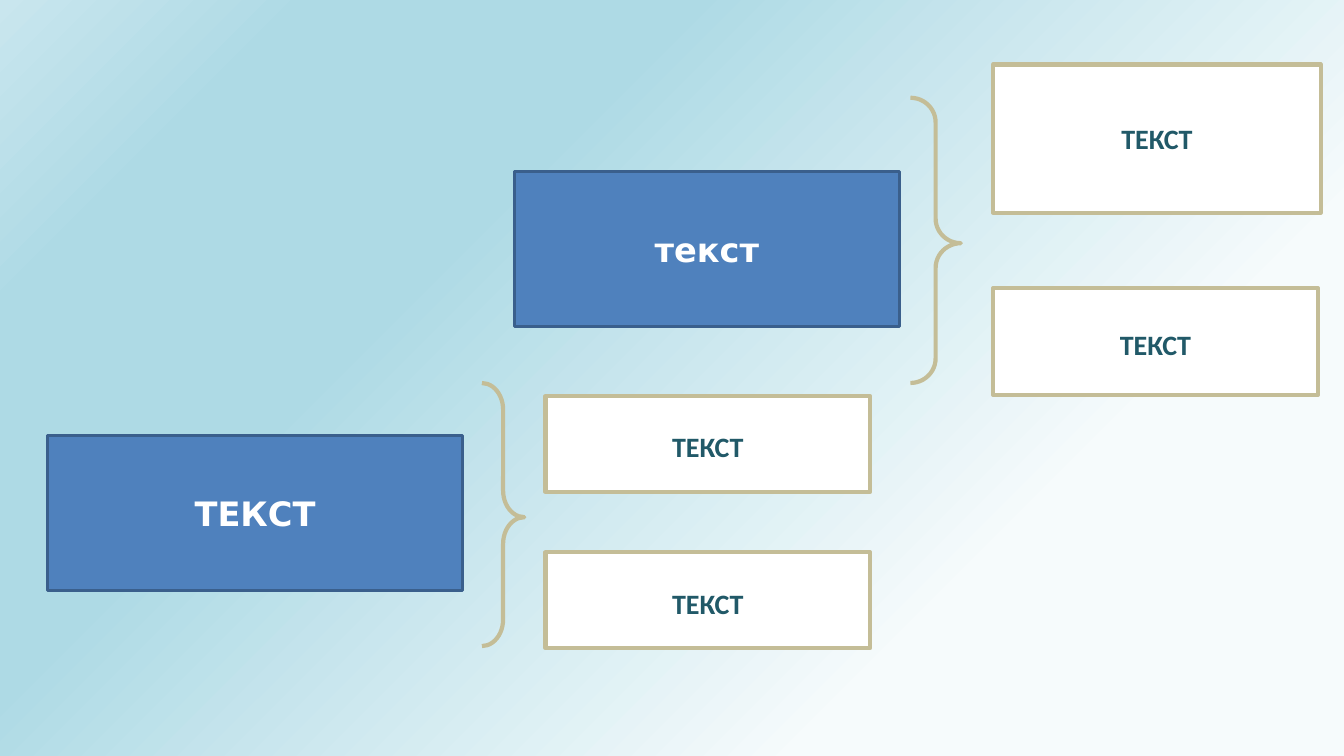
from dataclasses import dataclass

import pptx
import pptx.dml.color
import pptx.enum.shapes
import pptx.enum.text
import pptx.oxml.ns
import pptx.util
from lxml import etree
from pptx.util import Inches

SHAPES = pptx.enum.shapes.MSO_SHAPE


@dataclass(frozen=True)
class BoxStyle:
    fill: str
    line: str
    line_width: float
    font: str
    size: int
    color: str


class Theme:
    backdrop = ((0, "F6FBFC"), (26, "F6FBFC"), (67, "AEDAE5"), (85, "AEDAE5"), (100, "C9E6EE"))
    backdrop_angle = 135
    tan = "C4BD97"
    brace_width = 3
    topic = BoxStyle("4F81BD", "3A5F8C", 2, "DejaVu Sans", 24, "FFFFFF")
    detail = BoxStyle("FFFFFF", tan, 3, "Calibri", 20, "215968")


def rgb(code):
    return pptx.dml.color.RGBColor.from_string(code)


def paint_backdrop(page):
    fill = page.background.fill
    fill.gradient()
    fill.gradient_angle = Theme.backdrop_angle
    stops = next(page.element.iter(pptx.oxml.ns.qn("a:gsLst")))
    for stop in list(stops):
        stops.remove(stop)
    for percent, code in Theme.backdrop:
        stop = etree.SubElement(stops, pptx.oxml.ns.qn("a:gs"), pos=str(percent * 1000))
        etree.SubElement(stop, pptx.oxml.ns.qn("a:srgbClr"), val=code)


def add_outlined(page, kind, box, color, width):
    shape = page.shapes.add_shape(kind, *map(Inches, box))
    shape.shadow.inherit = False
    shape.line.color.rgb = rgb(color)
    shape.line.width = pptx.util.Pt(width)
    return shape


def add_label_box(page, box, text, style, spacing=1.0):
    shape = add_outlined(page, SHAPES.RECTANGLE, box, style.line, style.line_width)
    shape.fill.solid()
    shape.fill.fore_color.rgb = rgb(style.fill)
    frame = shape.text_frame
    frame.text = text
    frame.word_wrap = True
    frame.vertical_anchor = pptx.enum.text.MSO_ANCHOR.MIDDLE
    para = frame.paragraphs[0]
    para.alignment = pptx.enum.text.PP_ALIGN.CENTER
    para.line_spacing = spacing
    font = para.runs[0].font
    font.name = style.font
    font.size = pptx.util.Pt(style.size)
    font.bold = True
    font.color.rgb = rgb(style.color)


def add_brace(page, box, curve):
    brace = add_outlined(page, SHAPES.RIGHT_BRACE, box, Theme.tan, Theme.brace_width)
    brace.fill.background()
    brace.adjustments[0] = curve
    brace.adjustments[1] = 0.51


def add_branch(page, origin, topic, topic_size, brace, curve, details):
    """Place a topic, its brace and its details; offsets are from the topic's corner."""
    left, top = origin

    def place(offset):
        across, down, width, height = offset
        return left + across, top + down, width, height

    add_label_box(page, place((0, 0, *topic_size)), topic, Theme.topic)
    add_brace(page, place(brace), curve)
    for offset, spacing in details:
        add_label_box(page, place(offset), "ТЕКСТ", Theme.detail, spacing)


def main():
    deck = pptx.Presentation()
    deck.slide_width, deck.slide_height = Inches(13.33), Inches(7.5)
    page = deck.slides.add_slide(deck.slide_layouts[6])
    paint_backdrop(page)
    add_branch(
        page, (5.1, 1.7), "текст", (3.82, 1.54), (3.93, -0.73, 0.5, 2.83), 0.49,
        [((4.75, -1.06, 3.25, 1.47), 1.0), ((4.75, 1.16, 3.22, 1.06), 1.15)],
    )
    add_branch(
        page, (0.47, 4.32), "ТЕКСТ", (4.12, 1.54), (4.31, -0.52, 0.42, 2.61), 0.63,
        [((4.94, down, 3.22, 0.95), 1.15) for down in (-0.39, 1.16)],
    )
    deck.save("out.pptx")


if __name__ == "__main__":
    main()
